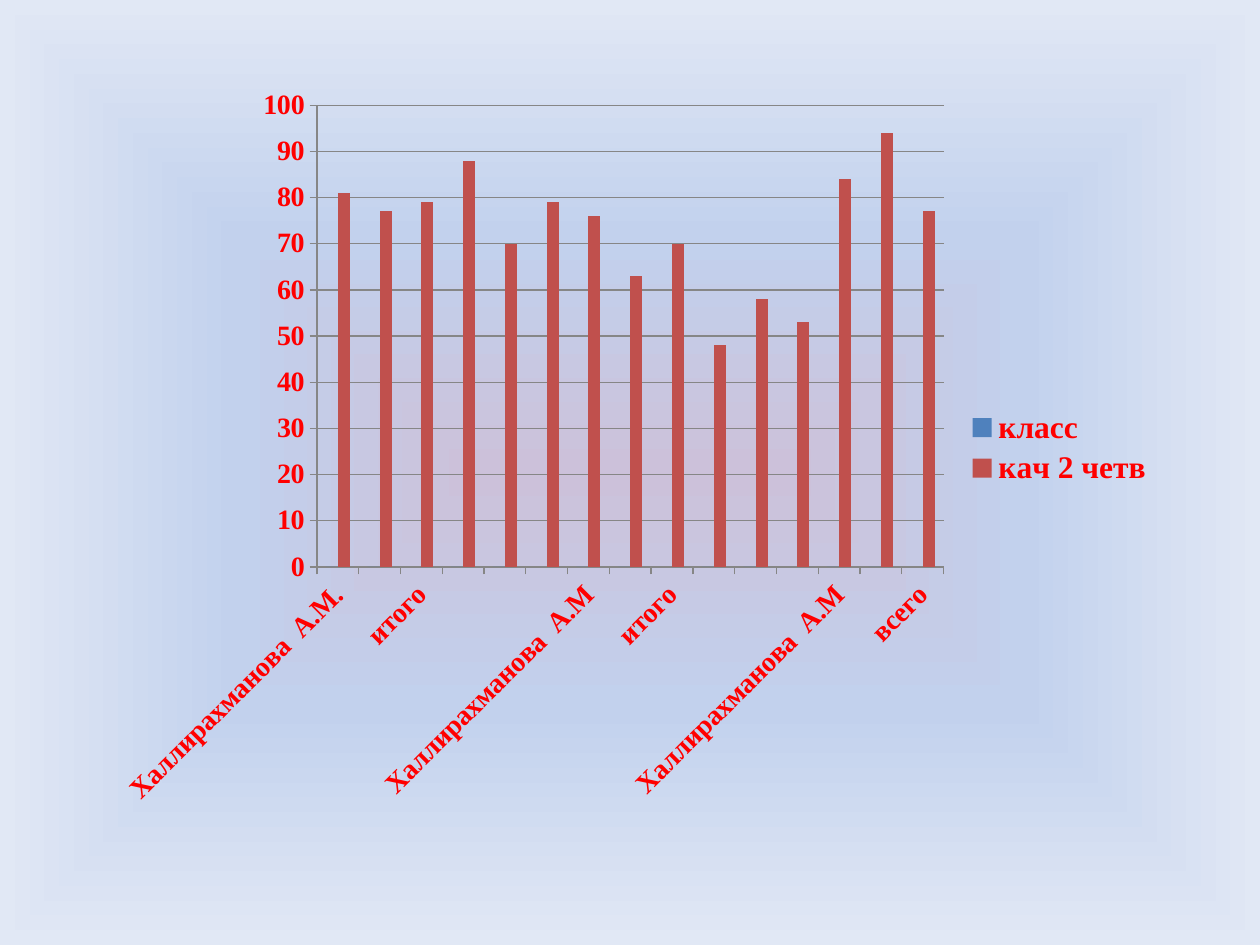
from dataclasses import dataclass

from lxml.etree import SubElement
from pptx import Presentation
from pptx.chart.data import CategoryChartData
from pptx.dml.color import RGBColor
from pptx.enum.chart import XL_CHART_TYPE, XL_LEGEND_POSITION, XL_TICK_MARK
from pptx.oxml import parse_xml
from pptx.oxml.ns import nsdecls, qn
from pptx.text.text import Font
from pptx.util import Inches, Pt

RED = RGBColor(0xFF, 0x00, 0x00)
BLUE = RGBColor(0x4F, 0x81, 0xBD)
BRICK = RGBColor(0xC0, 0x50, 0x4D)
GRAY = RGBColor(0x86, 0x86, 0x86)
LILAC = RGBColor(0xCC, 0xC1, 0xDA)
SKY = RGBColor(0xC2, 0xD1, 0xED)
PALE = RGBColor(0xE1, 0xE8, 0xF5)


@dataclass
class Series:
    name: str
    values: list[int | None]
    color: RGBColor


LABELS = {
    0: "Халлирахманова  А.М.", 2: "итого",
    6: "Халлирахманова  А.М", 8: "итого",
    12: "Халлирахманова  А.М", 14: "всего",
}
SERIES = [
    Series("класс", [0, 0, None] * 5, BLUE),
    Series("кач 2 четв",
           [81, 77, 79, 88, 70, 79, 76, 63, 70, 48, 58, 53, 84, 94, 77], BRICK),
]
CATEGORIES = [LABELS.get(index, "") for index in range(15)]


def set_font(font: Font, size: int) -> None:
    font.name = "Times New Roman"
    font.size = Pt(size)
    font.bold = True
    font.color.rgb = RED


def paint_background(page) -> None:
    stops = "".join(
        f'<a:gs pos="{percent * 1000}"><a:srgbClr val="{color}"/></a:gs>'
        for percent, color in ((0, LILAC), (50, SKY), (100, PALE))
    )
    fill = page.background.fill
    fill.solid()
    properties = page.element.find(".//" + qn("p:bgPr"))
    properties.replace(properties[0], parse_xml(
        f'<a:gradFill {nsdecls("a")} rotWithShape="1"><a:gsLst>{stops}</a:gsLst>'
        '<a:path path="shape"><a:fillToRect l="50000" t="50000" r="50000" b="50000"/>'
        '</a:path></a:gradFill>'
    ))


def place_plot(chart, left: float, top: float, width: float, height: float) -> None:
    plot_area = chart.element.find(".//" + qn("c:plotArea"))
    for old in plot_area.findall(qn("c:layout")):
        plot_area.remove(old)
    layout = parse_xml(f'<c:layout {nsdecls("c")}/>')
    plot_area.insert(0, layout)
    manual = SubElement(layout, qn("c:manualLayout"))
    settings = {"layoutTarget": "inner", "xMode": "edge", "yMode": "edge",
                "x": left, "y": top, "w": width, "h": height}
    for tag, value in settings.items():
        SubElement(manual, qn(f"c:{tag}")).set("val", str(value))


def add_quality_chart(page) -> None:
    data = CategoryChartData()
    data.categories = CATEGORIES
    for series in SERIES:
        data.add_series(series.name, series.values)
    chart = page.shapes.add_chart(
        XL_CHART_TYPE.COLUMN_CLUSTERED,
        Inches(0.83), Inches(0.6), Inches(8.43), Inches(5.91), data,
    ).chart
    chart.has_title = False
    chart.font.name = "Calibri"
    chart.font.size = Pt(10)

    plot = chart.plots[0]
    plot.gap_width = 150
    plot.overlap = 0
    plot.vary_by_categories = False
    for bars, series in zip(plot.series, SERIES):
        bars.format.fill.solid()
        bars.format.fill.fore_color.rgb = series.color

    for axis in (chart.category_axis, chart.value_axis):
        set_font(axis.tick_labels.font, 16)
        axis.major_tick_mark = XL_TICK_MARK.OUTSIDE
        axis.minor_tick_mark = XL_TICK_MARK.NONE
        axis.format.line.color.rgb = GRAY
    chart.value_axis.minimum_scale = 0
    chart.value_axis.maximum_scale = 100
    chart.value_axis.major_unit = 10
    chart.value_axis.major_gridlines.format.line.color.rgb = GRAY

    body = chart.category_axis.tick_labels.font._element.getparent().getparent().getparent()
    body.find(qn("a:bodyPr")).set("rot", "-2700000")

    chart.has_legend = True
    chart.legend.position = XL_LEGEND_POSITION.RIGHT
    chart.legend.include_in_layout = False
    set_font(chart.legend.font, 18)
    place_plot(chart, 0.2, 0.04, 0.59, 0.62)


def main() -> None:
    deck = Presentation()
    deck.slide_width = Inches(10)
    deck.slide_height = Inches(7.5)
    page = deck.slides.add_slide(deck.slide_layouts[6])
    paint_background(page)
    add_quality_chart(page)
    deck.save("out.pptx")


if __name__ == "__main__":
    main()
